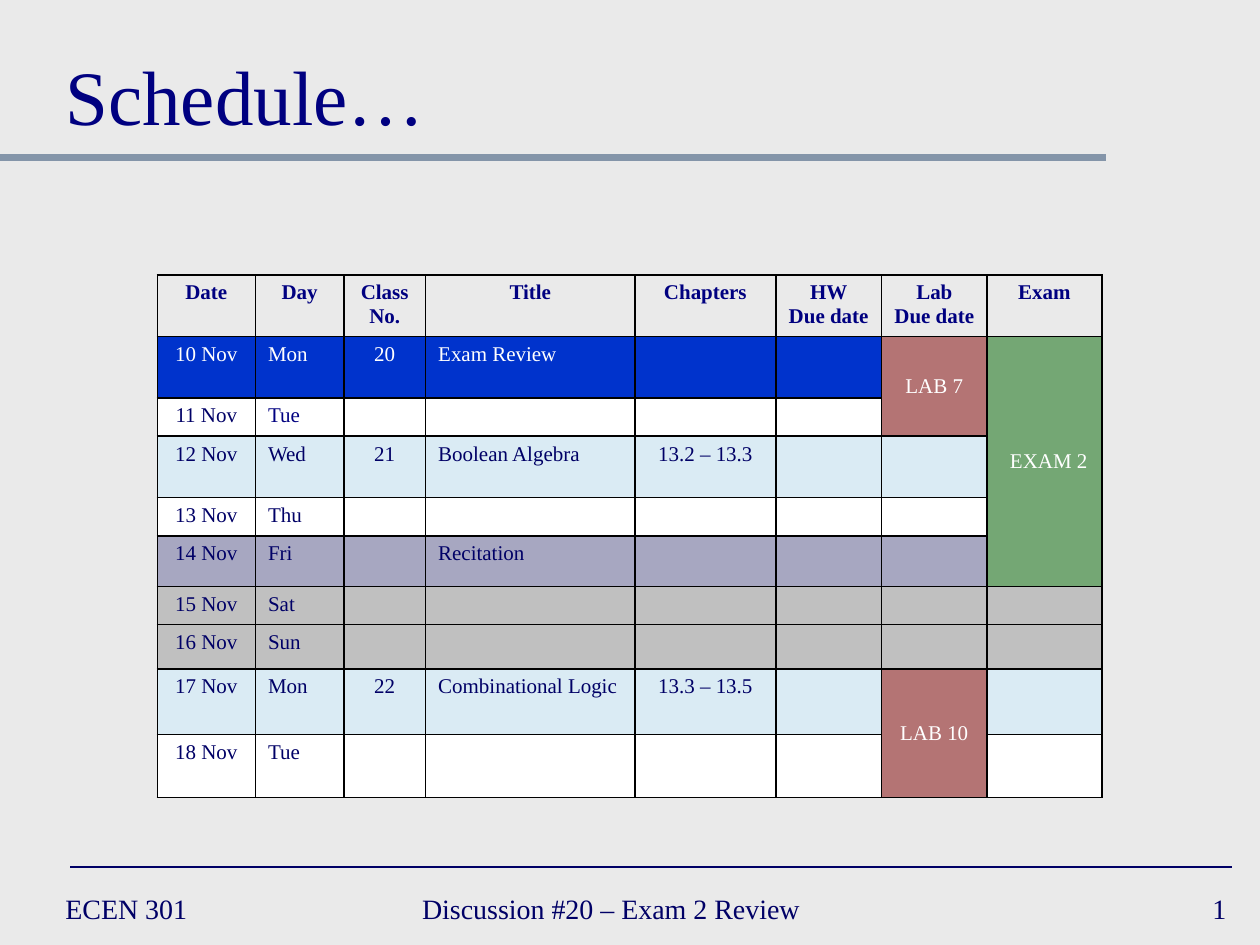
from dataclasses import dataclass
from typing import Optional

from lxml.etree import SubElement
from pptx import Presentation
from pptx.dml.color import RGBColor
from pptx.enum.shapes import MSO_CONNECTOR
from pptx.enum.text import MSO_ANCHOR, PP_ALIGN
from pptx.oxml.ns import qn
from pptx.util import Cm, Pt

FONT = "Times New Roman"
HEX = {
    "back": "EAEAEA", "rule": "8495A9", "ink": "000066", "head": "000080",
    "white": "FFFFFF", "black": "000000", "blue": "0033CC", "sky": "CCECFF",
    "plum": "666699", "gray": "C0C0C0", "red": "800000", "green": "006600",
}
SHEER = {"sky", "plum", "red", "green"}  # fills drawn at half opacity
WIDTHS = [1.98, 1.78, 1.65, 4.22, 2.84, 2.13, 2.13, 2.31]
HEADS = ["Date", "Day", "Class\nNo.", "Title", "Chapters",
         "HW\nDue date", "Lab\nDue date", "Exam"]
HEAD_HIGH = 1.24
LEFT_COLS = {1, 3}


@dataclass
class Row:
    high: float
    fill: str
    date: str
    day: str
    num: str = ""
    title: str = ""
    pages: str = ""
    ink: str = "ink"
    day_ink: Optional[str] = None


@dataclass
class Span:
    top: int
    end: int
    col: int
    text: str
    fill: str
    align: PP_ALIGN = PP_ALIGN.CENTER
    inset: float = 0.25
    base: str = "black"


@dataclass
class Label:
    text: str
    box: tuple
    size: int = 16
    ink: str = "ink"
    align: PP_ALIGN = PP_ALIGN.LEFT
    anchor: MSO_ANCHOR = MSO_ANCHOR.MIDDLE


@dataclass
class Rule:
    left: float
    right: float
    y: float
    ink: str
    width: float


ROWS = [
    Row(1.24, "blue", "10 Nov", "Mon", "20", "Exam Review", ink="white"),
    Row(0.64, "white", "11 Nov", "Tue", day_ink="head"),
    Row(1.24, "sky", "12 Nov", "Wed", "21", "Boolean Algebra", "13.2 – 13.3"),
    Row(0.76, "white", "13 Nov", "Thu"),
    Row(1.02, "plum", "14 Nov", "Fri", title="Recitation"),
    Row(0.76, "gray", "15 Nov", "Sat"),
    Row(0.89, "gray", "16 Nov", "Sun"),
    Row(1.32, "sky", "17 Nov", "Mon", "22", "Combinational Logic", "13.3 – 13.5"),
    Row(1.27, "white", "18 Nov", "Tue"),
]
SPANS = [
    Span(1, 2, 6, "LAB 7", "red", base="ink"),
    Span(1, 5, 7, "EXAM 2", "green", PP_ALIGN.LEFT, 0.46),
    Span(8, 9, 6, "LAB 10", "red"),
]
LABELS = [
    Label("Schedule…", (1.07, 0.43, 23.5, 2.54), 44, "head", anchor=MSO_ANCHOR.BOTTOM),
    Label("ECEN 301", (1.07, 17.78, 5.51, 1.07)),
    Label("Discussion #20 – Exam 2 Review", (8.26, 17.78, 9.73, 1.07)),
    Label("1", (19.69, 17.78, 5.28, 1.07), align=PP_ALIGN.RIGHT),
]
RULES = [Rule(0, 22.3, 3.18, "rule", 4), Rule(1.42, 24.84, 17.48, "ink", 1)]


def tint(name: str) -> RGBColor:
    return RGBColor.from_string(HEX[name])


def write(frame, text: str, size: int, ink: str, align: PP_ALIGN, bold=False) -> None:
    frame.text = text
    for para in frame.paragraphs:
        para.alignment = align
        for run in para.runs:
            font = run.font
            font.name, font.size, font.bold = FONT, Pt(size), bold
            font.color.rgb = tint(ink)
        if not para.runs:  # keeps empty cells from stretching their row
            SubElement(para._p, qn("a:endParaRPr"), sz=str(size * 100))


def edge(cell, base: str = "black") -> None:
    """Draw the four borders; base colours the bottom one."""
    props = cell._tc.get_or_add_tcPr()
    for side in "LRTB":
        line = SubElement(props, qn(f"a:ln{side}"), w=str(Pt(1)))
        fill = SubElement(line, qn("a:solidFill"))
        name = base if side == "B" else "black"
        SubElement(fill, qn("a:srgbClr"), val=HEX[name])


def paint(cell, name: str) -> None:
    cell.fill.solid()
    cell.fill.fore_color.rgb = tint(name)
    if name in SHEER:
        color = cell._tc.tcPr.find(qn("a:solidFill"))[0]
        SubElement(color, qn("a:alpha"), val="50000")


def add_label(slide, label: Label) -> None:
    frame = slide.shapes.add_textbox(*map(Cm, label.box)).text_frame
    frame.word_wrap = True
    frame.vertical_anchor = label.anchor
    write(frame, label.text, label.size, label.ink, label.align)


def add_rule(slide, rule: Rule) -> None:
    line = slide.shapes.add_connector(
        MSO_CONNECTOR.STRAIGHT, Cm(rule.left), Cm(rule.y), Cm(rule.right), Cm(rule.y))
    line.line.color.rgb = tint(rule.ink)
    line.line.width = Pt(rule.width)
    SubElement(line._element.spPr, qn("a:effectLst"))


def add_grid(slide) -> None:
    highs = [HEAD_HIGH] + [row.high for row in ROWS]
    grid = slide.shapes.add_table(
        len(highs), len(WIDTHS), Cm(3.17), Cm(5.54),
        Cm(sum(WIDTHS)), Cm(sum(highs))).table
    grid.first_row = grid.horz_banding = False
    for col, width in zip(grid.columns, WIDTHS):
        col.width = Cm(width)
    for line, high in zip(grid.rows, highs):
        line.height = Cm(high)

    bases = {(r, s.col): s.base for s in SPANS for r in range(s.top, s.end + 1)}
    bases[8, 7] = "ink"
    for r in range(len(highs)):
        for c in range(len(WIDTHS)):
            edge(grid.cell(r, c), bases.get((r, c), "black"))

    for c, text in enumerate(HEADS):
        cell = grid.cell(0, c)
        cell.fill.background()
        write(cell.text_frame, text, 12, "head", PP_ALIGN.CENTER, True)
    for r, row in enumerate(ROWS, 1):
        texts = [row.date, row.day, row.num, row.title, row.pages, "", "", ""]
        for c, text in enumerate(texts):
            cell = grid.cell(r, c)
            ink = row.day_ink if c == 1 and row.day_ink else row.ink
            align = PP_ALIGN.LEFT if c in LEFT_COLS else PP_ALIGN.CENTER
            write(cell.text_frame, text, 12, ink, align)
            if (r, c) not in bases or (r, c) == (8, 7):
                paint(cell, row.fill)

    for span in SPANS:
        cell = grid.cell(span.top, span.col)
        cell.merge(grid.cell(span.end, span.col))
        cell.vertical_anchor = MSO_ANCHOR.MIDDLE
        cell.margin_left = Cm(span.inset)
        paint(cell, span.fill)
        write(cell.text_frame, span.text, 12, "white", span.align)


def main() -> None:
    deck = Presentation()
    deck.slide_width, deck.slide_height = Cm(25.4), Cm(19.05)
    slide = deck.slides.add_slide(deck.slide_layouts[6])
    slide.background.fill.solid()
    slide.background.fill.fore_color.rgb = tint("back")
    for rule in RULES:
        add_rule(slide, rule)
    add_grid(slide)
    for label in LABELS:
        add_label(slide, label)
    deck.save("out.pptx")


if __name__ == "__main__":
    main()
